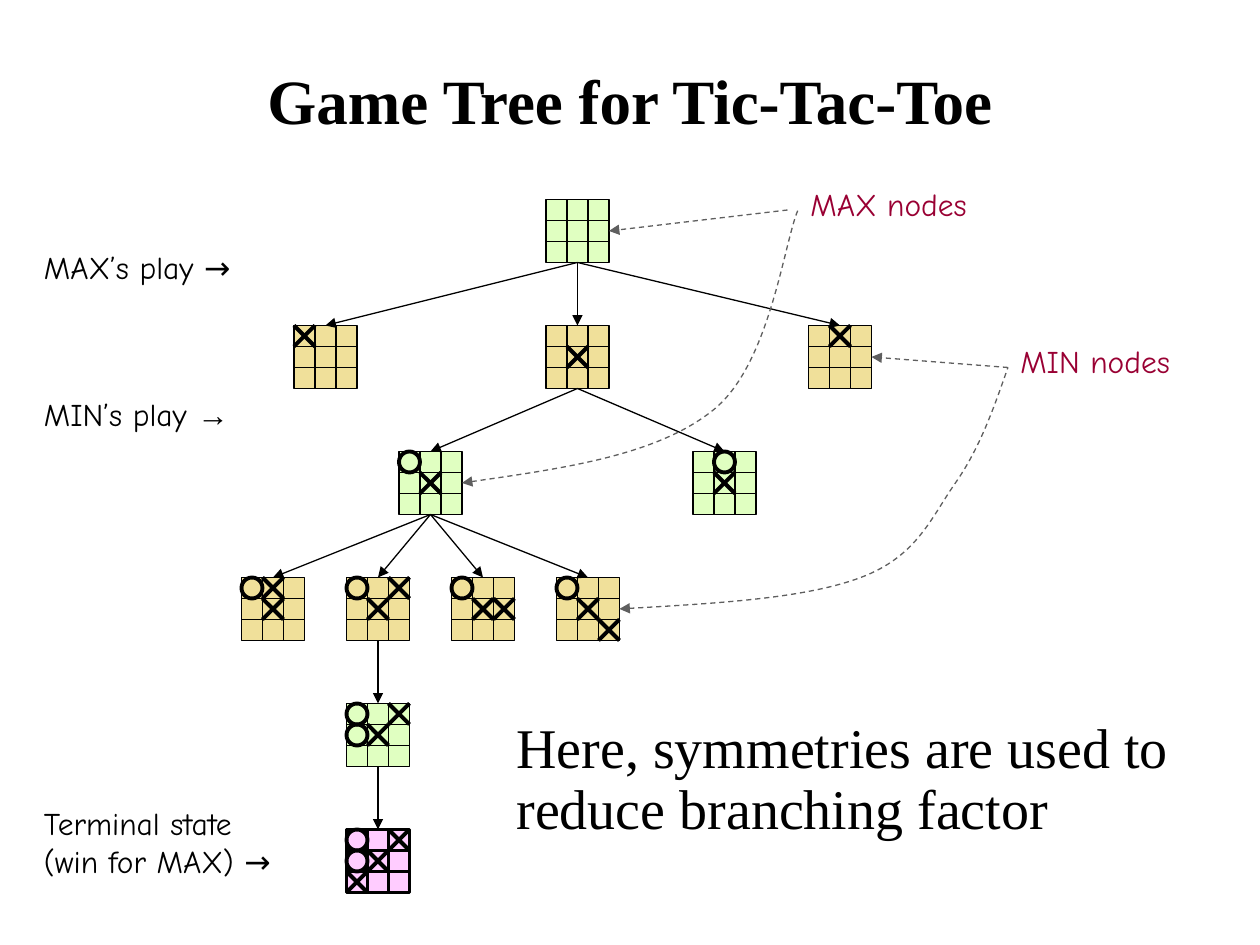
from dataclasses import dataclass
from typing import Optional

from lxml.etree import SubElement
from pptx import Presentation
from pptx.dml.color import RGBColor
from pptx.enum.dml import MSO_LINE
from pptx.enum.shapes import MSO_CONNECTOR, MSO_SHAPE
from pptx.enum.text import MSO_ANCHOR, MSO_AUTO_SIZE, PP_ALIGN
from pptx.oxml.ns import qn
from pptx.util import Cm, Pt

BLACK = RGBColor(0x00, 0x00, 0x00)
GRAY = RGBColor(0x5F, 0x5F, 0x5F)
CRIMSON = RGBColor(0x99, 0x00, 0x33)
GREEN = RGBColor(0xE0, 0xFF, 0xC1)
SAND = RGBColor(0xF0, 0xE0, 0x9A)
PINK = RGBColor(0xFF, 0xCC, 0xFF)

SERIF = "Times New Roman"
HAND = "Comic Neue"
TOP, RIGHT, BOTTOM = 0, 3, 2
FIRST_ROW, ROW_STEP = 9.5, 6  # in board cells


def cells(count: float) -> Cm:
    """Length of a number of board cells; six cells make 2.54 cm."""
    return Cm(count * 2.54 / 6)


@dataclass(frozen=True)
class Style:
    fill: RGBColor
    grid_width: float = 0.75
    filled_circles: bool = True


MAX_NODE = Style(GREEN, filled_circles=False)
MIN_NODE = Style(SAND)
TERMINAL = Style(PINK, grid_width=1.5)


@dataclass(frozen=True)
class Board:
    name: str
    left: float
    level: int
    style: Style
    marks: str = ""
    parent: Optional[str] = None


@dataclass(frozen=True)
class Label:
    text: str
    left: float
    top: float
    width: float
    height: float = 2.4
    color: RGBColor = BLACK
    font: str = HAND
    size: int = 18
    wrap: bool = False
    arrow: str = ""  # closing span set in Arial


BOARDS = [
    Board("root", 26, 0, MAX_NODE),
    Board("corner", 14, 1, MIN_NODE, "X../.../...", "root"),
    Board("center", 26, 1, MIN_NODE, ".../.X./...", "root"),
    Board("edge", 38.5, 1, MIN_NODE, ".X./.../...", "root"),
    Board("corner reply", 19, 2, MAX_NODE, "O../.X./...", "center"),
    Board("edge reply", 33, 2, MAX_NODE, ".O./.X./...", "center"),
    Board("top", 11.5, 3, MIN_NODE, "OX./.X./...", "corner reply"),
    Board("diagonal", 16.5, 3, MIN_NODE, "O.X/.X./...", "corner reply"),
    Board("side", 21.5, 3, MIN_NODE, "O../.XX/...", "corner reply"),
    Board("opposite", 26.5, 3, MIN_NODE, "O../.X./..X", "corner reply"),
    Board("missed block", 16.5, 4, MAX_NODE, "O.X/OX./...", "diagonal"),
    Board("win", 16.5, 5, TERMINAL, "O.X/OX./X..", "missed block"),
]

LABELS = [
    Label("MAX’s play →", 1.5, 11.5, 10.86),
    Label("MIN’s play ", 1.5, 18.5, 10.68, arrow="→"),
    Label("Terminal state\v(win for MAX) →", 1.5, 38, 13.14, 4.2),
    Label("MAX nodes", 38, 8.5, 9.18, color=CRIMSON),
    Label("MIN nodes", 48, 16, 9, color=CRIMSON),
]

# Start point, then three points for each Bézier segment
MAX_CURVE = [(22, 23), (26.67, 22.33), (31.33, 21.67), (34, 19.5),
             (36.67, 17.33), (37.33, 11.58), (38, 10)]
MIN_CURVE = [(29.5, 29), (33.9, 28.75), (38.35, 28.5), (41, 27.5),
             (43.67, 26.5), (44.33, 24.67), (45.5, 23),
             (46.67, 21.33), (47.33, 19.42), (48, 17.5)]


def style_line(shape, width: float, color: RGBColor = BLACK, dashed: bool = False) -> None:
    shape.line.color.rgb = color
    shape.line.width = Pt(width)
    if dashed:
        shape.line.dash_style = MSO_LINE.DASH


def add_arrowhead(shape, end: str) -> None:
    SubElement(shape.line._get_or_add_ln(), qn(f"a:{end}"), type="triangle")


def add_line(shapes, x1: float, y1: float, x2: float, y2: float, width: float = 0.75,
             color: RGBColor = BLACK, dashed: bool = False):
    line = shapes.add_connector(MSO_CONNECTOR.STRAIGHT,
                                cells(x1), cells(y1), cells(x2), cells(y2))
    style_line(line, width, color, dashed)
    SubElement(line._element.spPr, qn("a:effectLst"))
    return line


def add_box(shapes, kind: MSO_SHAPE, left: float, top: float, size: float,
            width: float, fill: Optional[RGBColor]):
    box = shapes.add_shape(kind, cells(left), cells(top), cells(size), cells(size))
    box.shadow.inherit = False
    if fill is None:
        box.fill.background()
    else:
        box.fill.solid()
        box.fill.fore_color.rgb = fill
    style_line(box, width)
    return box


def add_board(page, board: Board):
    shapes = page.shapes.add_group_shape().shapes
    style, left, top = board.style, board.left, FIRST_ROW + ROW_STEP * board.level
    square = add_box(shapes, MSO_SHAPE.RECTANGLE, left, top, 3, style.grid_width, style.fill)
    for step in (1, 2):
        add_line(shapes, left, top + step, left + 3, top + step, style.grid_width)
        add_line(shapes, left + step, top, left + step, top + 3, style.grid_width)
    for row, marks in enumerate(board.marks.split("/")):
        for column, mark in enumerate(marks):
            x, y = left + column, top + row
            if mark == "X":
                add_line(shapes, x, y, x + 1, y + 1, 2.25)
                add_line(shapes, x, y + 1, x + 1, y, 2.25)
            elif mark == "O":
                add_box(shapes, MSO_SHAPE.OVAL, x, y, 1, 2.25,
                        style.fill if style.filled_circles else None)
    return square


def add_label(page, label: Label):
    box = page.shapes.add_textbox(cells(label.left), cells(label.top),
                                  cells(label.width), cells(label.height))
    frame = box.text_frame
    frame.word_wrap = label.wrap
    frame.auto_size = MSO_AUTO_SIZE.SHAPE_TO_FIT_TEXT
    para = frame.paragraphs[0]
    para.text = label.text
    para.font.name, para.font.size = label.font, Pt(label.size)
    para.font.color.rgb = label.color
    if label.arrow:
        span = para.add_run()
        span.text = label.arrow
        span.font.name = "Arial"
    return box


def add_curve(page, points: list[tuple[float, float]]) -> None:
    corners = [(cells(x), cells(y)) for x, y in points]
    builder = page.shapes.build_freeform(*corners[0])
    builder.add_line_segments(corners[1:], close=False)
    curve = builder.convert_to_shape()
    outline = next(curve._element.iter(qn("a:path")))
    segments = outline.findall(qn("a:lnTo"))
    for start in range(0, len(segments), 3):
        bezier = SubElement(outline, qn("a:cubicBezTo"))
        for segment in segments[start:start + 3]:
            bezier.append(segment[0])
            outline.remove(segment)
    curve.shadow.inherit = False
    curve.fill.background()
    style_line(curve, 0.75, GRAY, dashed=True)
    add_arrowhead(curve, "headEnd")


def add_pointer(page, x: float, y: float, square) -> None:
    pointer = add_line(page.shapes, x, y, x, y, color=GRAY, dashed=True)
    pointer.end_connect(square, RIGHT)
    add_arrowhead(pointer, "tailEnd")


def main() -> None:
    deck = Presentation()
    deck.slide_width, deck.slide_height = cells(60), cells(45)
    page = deck.slides.add_slide(deck.slide_layouts[6])

    # Title
    title = add_label(page, Label("Game Tree for Tic-Tac-Toe", 3, 1, 54, 7.5,
                                  font=SERIF, size=36, wrap=True))
    title.text_frame.auto_size = MSO_AUTO_SIZE.NONE
    title.text_frame.vertical_anchor = MSO_ANCHOR.MIDDLE
    heading = title.text_frame.paragraphs[0]
    heading.alignment = PP_ALIGN.CENTER
    heading.font.bold = True

    # Boards and the moves between them
    squares = {board.name: add_board(page, board) for board in BOARDS}
    for board in BOARDS:
        if board.parent:
            move = add_line(page.shapes, 0, 0, 0, 0)
            move.begin_connect(squares[board.parent], BOTTOM)
            move.end_connect(squares[board.name], TOP)
            add_arrowhead(move, "tailEnd")

    # Labels and the remark
    for label in LABELS:
        add_label(page, label)
    remark = add_label(page, Label("Here, symmetries are used to reduce branching factor",
                                   24, 34, 33, 6.5, font=SERIF, size=32, wrap=True))
    remark.text_frame.paragraphs[0].line_spacing = 0.9

    # Dashed pointers from the node labels
    add_curve(page, MAX_CURVE)
    add_pointer(page, 37.5, 10, squares["root"])
    add_curve(page, MIN_CURVE)
    add_pointer(page, 48, 17.5, squares["edge"])

    deck.save("out.pptx")


if __name__ == "__main__":
    main()
